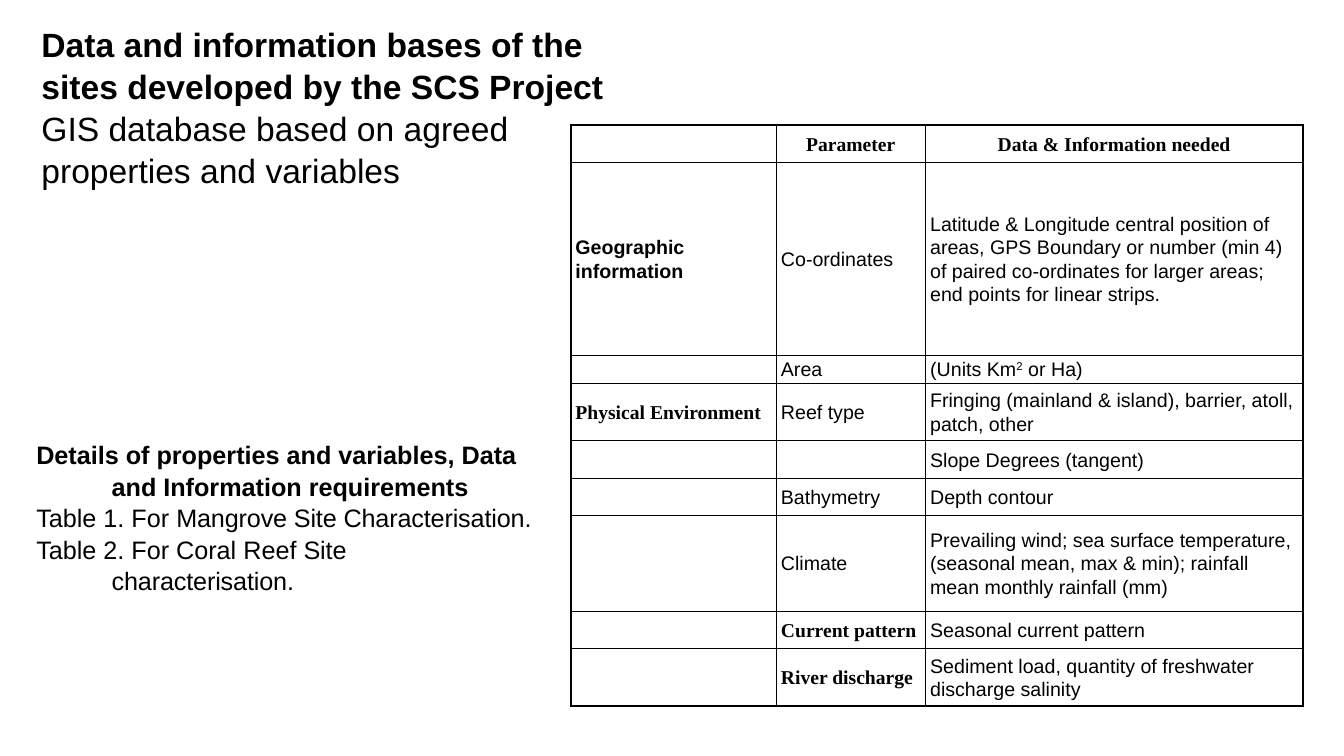
from dataclasses import dataclass

from lxml import etree
from pptx import Presentation
from pptx.dml.color import RGBColor
from pptx.enum.text import MSO_ANCHOR, MSO_AUTO_SIZE, PP_ALIGN
from pptx.oxml.ns import qn
from pptx.util import Cm, Pt

TOP, MIDDLE = MSO_ANCHOR.TOP, MSO_ANCHOR.MIDDLE
LEFT, CENTER = PP_ALIGN.LEFT, PP_ALIGN.CENTER
NO_AUTOFIT = MSO_AUTO_SIZE.NONE


@dataclass(frozen=True)
class Theme:
    sans: str = "Arial"
    serif: str = "Times New Roman"
    ink: str = "000000"
    title_size: int = 24
    list_size: int = 18
    table_size: int = 14
    text_spacing: float = 1.04
    table_spacing: float = 1.07
    outer_line: float = 1.5
    inner_line: float = 1


THEME = Theme()


@dataclass(frozen=True)
class Span:
    text: str
    superscript: bool = False
    tracking: float = 0


@dataclass(frozen=True)
class Para:
    spans: tuple[Span, ...] = ()
    bold: bool = False
    font: str = THEME.sans
    align: PP_ALIGN = LEFT


@dataclass(frozen=True)
class Box:
    left: float
    top: float
    width: float
    height: float


@dataclass(frozen=True)
class Row:
    height: float
    cells: tuple[Para, Para, Para]


def plain(text: str) -> Para:
    return Para((Span(text),))


def strong(text: str) -> Para:
    return Para((Span(text),), bold=True)


def serif(text: str, align: PP_ALIGN = LEFT) -> Para:
    return Para((Span(text),), bold=True, font=THEME.serif, align=align)


EMPTY = Para()

TITLE_BOX = Box(0.79, 0.43, 14.76, 4.37)
TITLE = (
    strong("Data and information bases of the sites developed by the SCS Project"),
    plain("GIS database based on agreed properties and variables"),
)

LIST_BOX = Box(0.66, 10.92, 13.06, 4.88)
LIST_INDENT = 1.9
LIST = (
    strong("Details of properties and variables, Data and Information requirements"),
    Para((Span("Table 1. For "), Span("Mangrove Site Characterisation.", tracking=-0.1))),
    Para((Span("Table 2. For Coral Reef"), Span(" Site characterisation.", tracking=-0.1))),
)

TABLE_LEFT, TABLE_TOP = 14.38, 3.15
COLUMN_WIDTHS = (5.18, 3.76, 9.52)
ROWS = (
    Row(0.94, (EMPTY, serif("Parameter", CENTER), serif("Data & Information needed", CENTER))),
    Row(4.86, (
        strong("Geographic information"),
        plain("Co-ordinates"),
        plain("Latitude & Longitude central position of areas, GPS Boundary or number (min 4) "
              "of paired co-ordinates for larger areas; end points for linear strips."),
    )),
    Row(0.71, (
        EMPTY,
        plain("Area"),
        Para((Span("(Units Km"), Span("2", superscript=True), Span(" or Ha)"))),
    )),
    Row(1.45, (
        serif("Physical Environment"),
        plain("Reef type"),
        plain("Fringing (mainland & island), barrier, atoll, patch, other"),
    )),
    Row(0.94, (EMPTY, EMPTY, plain("Slope Degrees (tangent)"))),
    Row(0.94, (EMPTY, plain("Bathymetry"), plain("Depth contour"))),
    Row(2.41, (
        EMPTY,
        plain("Climate"),
        plain("Prevailing wind; sea surface temperature, (seasonal mean, max & min); "
              "rainfall mean monthly rainfall (mm)"),
    )),
    Row(0.94, (EMPTY, serif("Current pattern"), plain("Seasonal current pattern"))),
    Row(1.45, (
        EMPTY,
        serif("River discharge"),
        plain("Sediment load, quantity of freshwater discharge salinity"),
    )),
)


def write_paragraph(paragraph, para: Para, size: int, spacing: float) -> None:
    paragraph.alignment = para.align
    paragraph.line_spacing = spacing
    paragraph.space_before = paragraph.space_after = Pt(0)
    font = paragraph.font
    font.name, font.size, font.bold = para.font, Pt(size), para.bold
    font.color.rgb = RGBColor.from_string(THEME.ink)
    for span in para.spans:
        run = paragraph.add_run()
        run.text = span.text
        if span.superscript:
            run.font._element.set("baseline", "30000")
        if span.tracking:
            run.font._element.set("spc", str(round(span.tracking * 100)))
    if not para.spans:
        etree.SubElement(paragraph._p, qn("a:endParaRPr"), sz=str(size * 100))


def fill_placeholder(shape, box: Box, paras: tuple[Para, ...], size: int,
                     indent: float = 0) -> None:
    """Place the shape and write its paragraphs, unbulleted, with a hanging indent."""
    shape.left, shape.top = Cm(box.left), Cm(box.top)
    shape.width, shape.height = Cm(box.width), Cm(box.height)
    frame = shape.text_frame
    frame.word_wrap = True
    frame.auto_size = NO_AUTOFIT
    frame.vertical_anchor = TOP
    for index, para in enumerate(paras):
        paragraph = frame.add_paragraph() if index else frame.paragraphs[0]
        properties = paragraph._p.get_or_add_pPr()
        properties.set("marL", str(Cm(indent)))
        properties.set("indent", str(-Cm(indent)))
        etree.SubElement(properties, qn("a:buNone"))
        write_paragraph(paragraph, para, size, THEME.text_spacing)


def draw_borders(cell, outer_sides: dict[str, bool]) -> None:
    """Rule every side of a cell, heavier on the sides at the table's edge."""
    properties = cell._tc.get_or_add_tcPr()
    for position, (side, is_outer) in enumerate(outer_sides.items()):
        width = THEME.outer_line if is_outer else THEME.inner_line
        line = etree.Element(qn(f"a:{side}"), w=str(Pt(width)))
        fill = etree.SubElement(line, qn("a:solidFill"))
        etree.SubElement(fill, qn("a:srgbClr"), val=THEME.ink)
        properties.insert(position, line)


def add_parameter_table(slide) -> None:
    row_count, column_count = len(ROWS), len(COLUMN_WIDTHS)
    frame = slide.shapes.add_table(
        row_count, column_count, Cm(TABLE_LEFT), Cm(TABLE_TOP),
        Cm(sum(COLUMN_WIDTHS)), Cm(sum(row.height for row in ROWS)))
    table = frame.table
    table.first_row = table.horz_banding = False
    for column, width in zip(table.columns, COLUMN_WIDTHS):
        column.width = Cm(width)
    for row_index, row in enumerate(ROWS):
        table.rows[row_index].height = Cm(row.height)
        for column_index, para in enumerate(row.cells):
            cell = table.cell(row_index, column_index)
            cell.fill.background()
            cell.vertical_anchor = MIDDLE
            cell.margin_left = cell.margin_right = Cm(0.12)
            cell.margin_top = cell.margin_bottom = 0
            write_paragraph(cell.text_frame.paragraphs[0], para,
                            THEME.table_size, THEME.table_spacing)
            draw_borders(cell, {
                "lnL": column_index == 0,
                "lnR": column_index == column_count - 1,
                "lnT": row_index == 0,
                "lnB": row_index == row_count - 1,
            })


def main() -> None:
    deck = Presentation()
    deck.slide_width, deck.slide_height = Cm(33.87), Cm(19.05)
    page = deck.slides.add_slide(deck.slide_layouts[1])
    fill_placeholder(page.shapes.title, TITLE_BOX, TITLE, THEME.title_size)
    fill_placeholder(page.placeholders[1], LIST_BOX, LIST, THEME.list_size, LIST_INDENT)
    add_parameter_table(page)
    deck.save("out.pptx")


if __name__ == "__main__":
    main()
